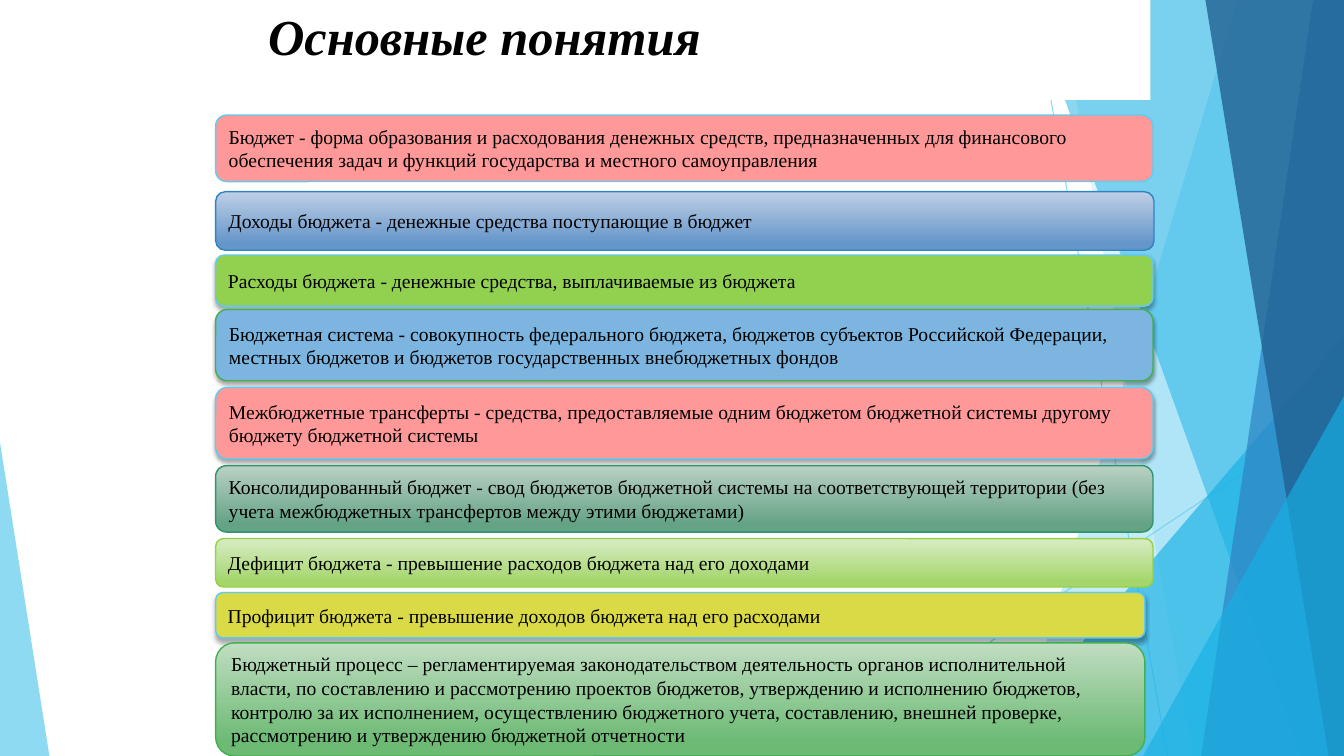
from dataclasses import dataclass

from lxml.etree import SubElement
from pptx import Presentation
from pptx.dml.color import RGBColor as Rgb
from pptx.enum.shapes import MSO_CONNECTOR as Connector, MSO_SHAPE as Preset
from pptx.enum.text import MSO_ANCHOR as Anchor, MSO_AUTO_SIZE as AutoSize, PP_ALIGN as Align
from pptx.oxml.ns import qn
from pptx.util import Pt


@dataclass(frozen=True)
class Theme:
    """Colours, font and type sizes of the slide."""
    font: str = "Times New Roman"
    title_size: int = 36
    term_size: int = 14
    ink: str = "000000"
    paper: str = "FFFFFF"
    sky: str = "5FCBEF"
    azure: str = "17B0E4"
    blue: str = "2E83C3"
    navy: str = "226292"
    green: str = "42B051"
    teal: str = "2E946B"
    lime: str = "96D141"
    rose: str = "FF9999"
    leaf: str = "92D050"
    cornflower: str = "7CB5E0"
    mustard: str = "DADA46"
    blue_fade: tuple = ("BFCFE5", "6596CA")
    teal_fade: tuple = ("BAD1C4", "65A385")
    lime_fade: tuple = ("D8ECC5", "A5D66C")
    green_fade: tuple = ("C0DDC2", "6DBA74")


THEME = Theme()
WIDTH, HEIGHT = 960, 540

TERMS = [
    (82.2, 47.5, 669.6, THEME.rose, THEME.sky, False,
     "Бюджет - форма образования и расходования денежных средств, предназначенных для "
     "финансового обеспечения задач и функций государства и местного самоуправления"),
    (136.9, 41.8, 670.3, THEME.blue_fade, THEME.blue, False,
     "Доходы бюджета - денежные средства поступающие в бюджет"),
    (182.2, 36.5, 669.6, THEME.leaf, THEME.sky, True,
     "Расходы бюджета - денежные средства, выплачиваемые из бюджета"),
    (221, 51, 669.6, THEME.cornflower, THEME.green, True,
     "Бюджетная система - совокупность федерального бюджета, бюджетов субъектов Российской "
     "Федерации, местных бюджетов и бюджетов государственных внебюджетных фондов"),
    (276.7, 51, 669.6, THEME.rose, THEME.sky, True,
     "Межбюджетные трансферты - средства, предоставляемые одним бюджетом бюджетной системы "
     "другому бюджету бюджетной системы"),
    (332.6, 47.5, 669.6, THEME.teal_fade, THEME.teal, False,
     "Консолидированный бюджет - свод бюджетов бюджетной системы на соответствующей территории "
     "(без учета межбюджетных трансфертов между этими бюджетами)"),
    (384.7, 34.6, 669.6, THEME.lime_fade, THEME.lime, False,
     "Дефицит бюджета - превышение расходов бюджета над его доходами"),
    (423.2, 32.4, 663.8, THEME.mustard, THEME.sky, True,
     "Профицит бюджета - превышение доходов бюджета над его расходами"),
    (459.2, 80.8, 663.8, THEME.green_fade, THEME.green, False,
     "Бюджетный процесс – регламентируемая законодательством деятельность органов "
     "исполнительной власти, по составлению и рассмотрению проектов бюджетов, утверждению и "
     "исполнению бюджетов, контролю за их исполнением, осуществлению бюджетного учета, "
     "составлению, внешней проверке, рассмотрению и утверждению бюджетной отчетности"),
]


def set_values(target, values):
    """Set each named attribute of the target."""
    for name, value in values.items():
        setattr(target, name, value)


def fade(properties, percent):
    """Give the first colour in the properties an opacity."""
    colour = next(properties.iter(qn("a:srgbClr")))
    SubElement(colour, qn("a:alpha"), val=str(percent * 1000))


def paint_facet(facet, colour, percent):
    """Fill a background facet with a translucent colour and no outline."""
    facet.shadow.inherit = False
    facet.fill.solid()
    facet.fill.fore_color.rgb = Rgb.from_string(colour)
    fade(facet._element.spPr, percent)
    facet.line.fill.background()


def draw_facets(slide, width, height):
    """Draw the layered rays, bands and corner triangles behind the content."""
    for x1, y1, x2, y2 in [(738, 0, 834, height), (width, 290, 585, height)]:
        ray = slide.shapes.add_connector(Connector.STRAIGHT, Pt(x1), Pt(y1), Pt(x2), Pt(y2))
        ray.line.width = Pt(0.75)
        ray.line.color.rgb = Rgb.from_string(THEME.sky)
        fade(ray._element.spPr, 70)
        SubElement(ray._element.spPr, qn("a:effectLst"))

    def band(top_x, bottom_x, colour, percent):
        """Draw a band from a slanted left edge to the right side."""
        outline = slide.shapes.build_freeform(Pt(top_x), 0)
        outline.add_line_segments([(Pt(width), 0), (Pt(width), Pt(height)), (Pt(bottom_x), Pt(height))])
        paint_facet(outline.convert_to_shape(), colour, percent)

    def corner(left, top, right, apex, colour, percent):
        """Draw a triangle standing on the bottom edge."""
        triangle = slide.shapes.add_shape(
            Preset.ISOSCELES_TRIANGLE, Pt(left), Pt(top), Pt(right - left), Pt(height - top))
        triangle.adjustments[0] = apex
        paint_facet(triangle, colour, percent)

    band(884, 723, THEME.sky, 36)
    band(756, 852, THEME.sky, 20)
    corner(703.5, 240, width, 1, THEME.azure, 66)
    band(735, 929.5, THEME.azure, 50)
    band(938, 858, THEME.blue, 70)
    band(861, 949, THEME.navy, 80)
    corner(816.5, 283, width, 1, THEME.azure, 66)
    corner(0, 316, 35.3, 0, THEME.sky, 70)


def write(frame, text, size, anchor, **emphasis):
    """Write one left-aligned paragraph in the theme font."""
    set_values(frame, {"text": text, "word_wrap": True, "auto_size": AutoSize.NONE,
                       "vertical_anchor": anchor})
    paragraph = frame.paragraphs[0]
    paragraph.alignment = Align.LEFT
    font = paragraph.runs[0].font
    set_values(font, {"name": THEME.font, "size": Pt(size), **emphasis})
    font.color.rgb = Rgb.from_string(THEME.ink)


def place_title(slide, left, top, width, height):
    """Place the heading on its white panel above the facets."""
    heading = slide.shapes.title
    set_values(heading, {"left": Pt(left), "top": Pt(top), "width": Pt(width), "height": Pt(height)})
    heading.fill.solid()
    heading.fill.fore_color.rgb = Rgb.from_string(THEME.paper)
    write(heading.text_frame, "Основные понятия", THEME.title_size, Anchor.TOP, bold=True, italic=True)
    slide.shapes._spTree.append(heading._element)


def cast_shadow(card):
    """Add a soft shadow just below the card."""
    shadow = SubElement(card._element.spPr.find(qn("a:effectLst")), qn("a:outerShdw"),
                        blurRad=str(Pt(3)), dist=str(Pt(2)), dir="5400000", rotWithShape="0")
    colour = SubElement(shadow, qn("a:srgbClr"), val=THEME.ink)
    SubElement(colour, qn("a:alpha"), val="35000")


def place_term(slide, left, top, width, height, fill, edge, raised, definition):
    """Place one rounded card with a term and its definition."""
    card = slide.shapes.add_shape(Preset.ROUNDED_RECTANGLE, Pt(left), Pt(top), Pt(width), Pt(height))
    card.shadow.inherit = False
    if isinstance(fill, tuple):
        card.fill.gradient()
        card.fill.gradient_angle = 270
        for stop, colour, position in zip(card.fill.gradient_stops, fill, (0, 0.88)):
            stop.color.rgb = Rgb.from_string(colour)
            stop.position = position
    else:
        card.fill.solid()
        card.fill.fore_color.rgb = Rgb.from_string(fill)
    card.line.width = Pt(1)
    card.line.color.rgb = Rgb.from_string(edge)
    if raised:
        cast_shadow(card)
    write(card.text_frame, definition, THEME.term_size, Anchor.MIDDLE)


def main():
    """Build the slide of basic budget terms."""
    deck = Presentation()
    set_values(deck, {"slide_width": Pt(WIDTH), "slide_height": Pt(HEIGHT)})
    slide = deck.slides.add_slide(deck.slide_layouts[5])
    draw_facets(slide, WIDTH, HEIGHT)
    place_title(slide, 184.3, 0, 637.5, 71.3)
    for top, height, width, *content in TERMS:
        place_term(slide, 154, top, width, height, *content)
    deck.save("out.pptx")


if __name__ == "__main__":
    main()
